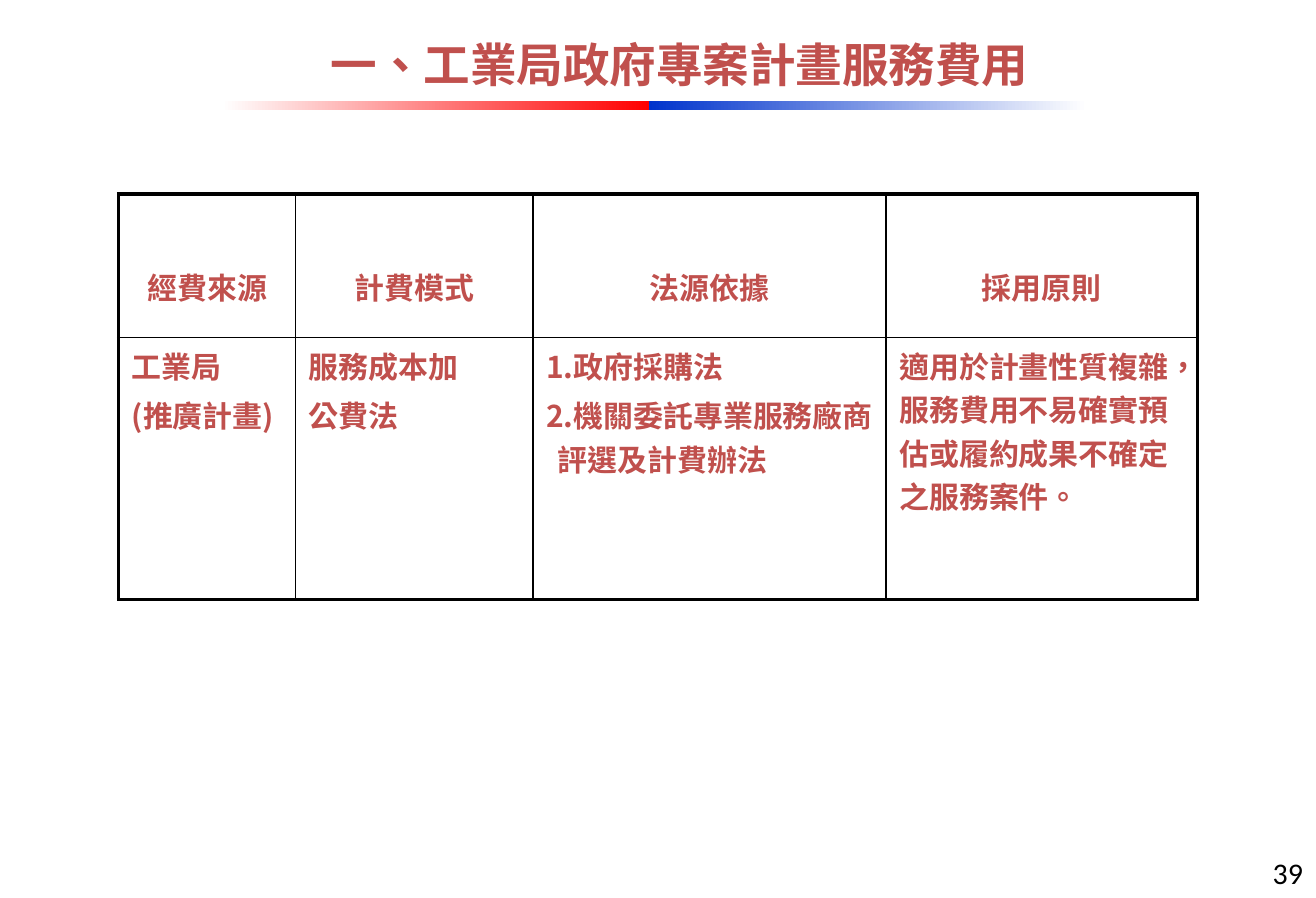
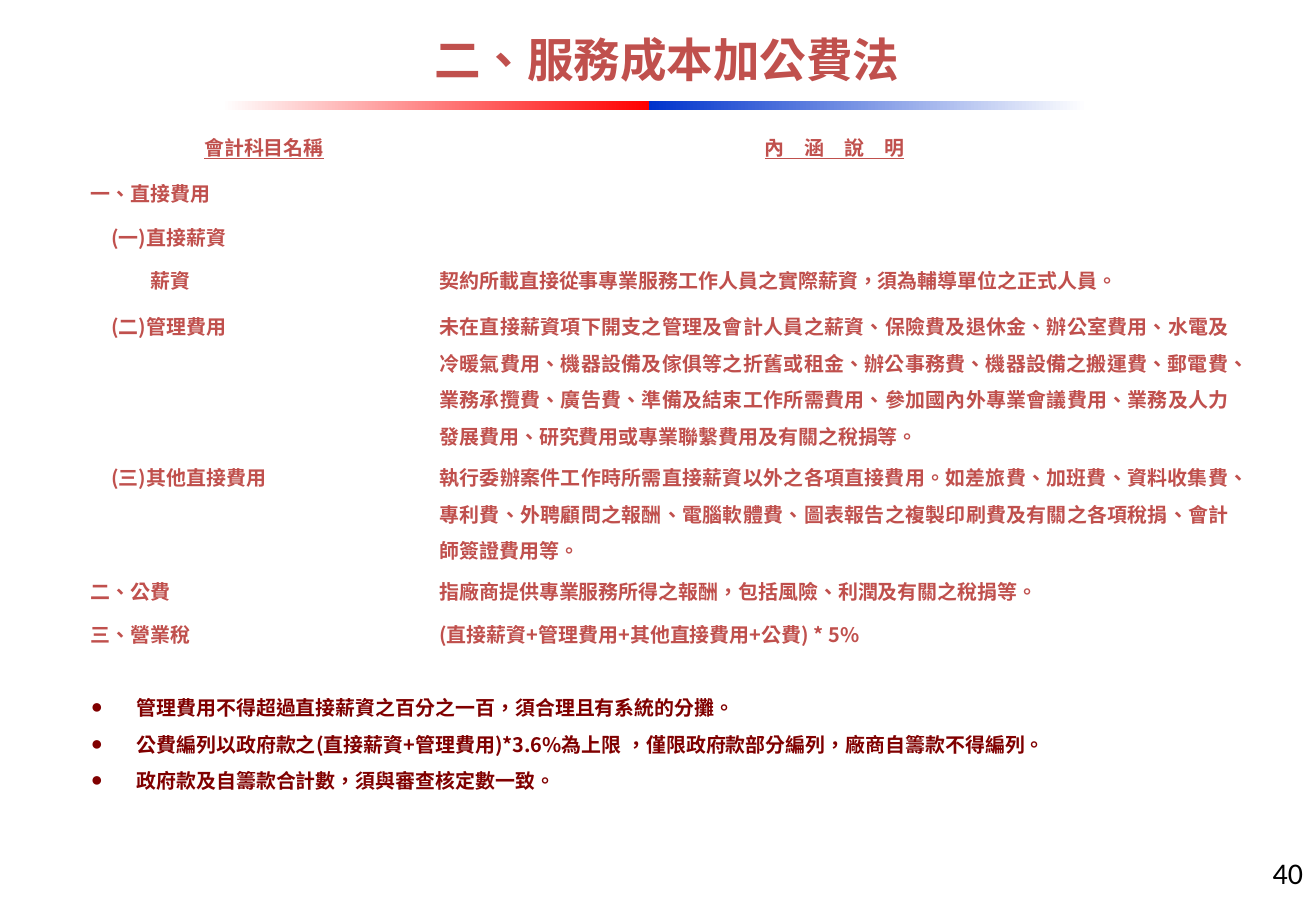
"""Build two slides on service fees for government projects."""
from lxml.etree import SubElement
from pptx import Presentation
from pptx.dml.color import RGBColor
from pptx.enum.shapes import MSO_SHAPE
from pptx.enum.text import MSO_ANCHOR, PP_ALIGN
from pptx.oxml import parse_xml
from pptx.oxml.ns import nsdecls, qn
from pptx.util import Inches, Pt

BRICK = RGBColor(0xC0, 0x50, 0x4D)
MAROON = RGBColor(0x80, 0x00, 0x00)
BLACK = RGBColor(0x00, 0x00, 0x00)
WHITE = RGBColor(0xFF, 0xFF, 0xFF)
RED = RGBColor(0xFF, 0x00, 0x00)
BLUE = RGBColor(0x00, 0x33, 0xCC)
EAST_ASIAN = "Noto Sans CJK TC"
TABLE_FONT = "Noto Sans CJK SC"
NO_STYLE = "{2D5ABB26-0587-4C30-8999-92F81FD0307C}"
OUTER, INNER = Pt(2.25), Pt(1)
LINE = Pt(22)

FEE_HEADINGS = ["經費來源", "計費模式", "法源依據", "採用原則"]
FEE_DETAILS = [
    ["工業局", "(推廣計畫)"],
    ["服務成本加", "公費法"],
    ["1.政府採購法", "2.機關委託專業服務廠商評選及計費辦法"],
    ["適用於計畫性質複雜，服務費用不易確實預估或履約成果不確定之服務案件。"],
]
ACCOUNT_HEADINGS = ["會計科目名稱", "內　涵　說　明"]
MAIN_ITEM, SUB_ITEM, DETAIL_ITEM = (0.33, -0.33), (0.5, -0.33), (0.5, 0)
ACCOUNTS = [
    (MAIN_ITEM, "一、直接費用", ""),
    (SUB_ITEM, "(一)直接薪資", ""),
    (DETAIL_ITEM, "薪資", "契約所載直接從事專業服務工作人員之實際薪資，須為輔導單位之正式人員。"),
    (SUB_ITEM, "(二)管理費用",
     "未在直接薪資項下開支之管理及會計人員之薪資、保險費及退休金、辦公室費用、水電及"
     "冷暖氣費用、機器設備及傢俱等之折舊或租金、辦公事務費、機器設備之搬運費、郵電費、"
     "業務承攬費、廣告費、準備及結束工作所需費用、參加國內外專業會議費用、業務及人力"
     "發展費用、研究費用或專業聯繫費用及有關之稅捐等。"),
    (SUB_ITEM, "(三)其他直接費用",
     "執行委辦案件工作時所需直接薪資以外之各項直接費用。如差旅費、加班費、資料收集費、"
     "專利費、外聘顧問之報酬、電腦軟體費、圖表報告之複製印刷費及有關之各項稅捐、會計"
     "師簽證費用等。"),
    (MAIN_ITEM, "二、公費", "指廠商提供專業服務所得之報酬，包括風險、利潤及有關之稅捐等。"),
    (MAIN_ITEM, "三、營業稅", "(直接薪資+管理費用+其他直接費用+公費) * 5%"),
]
NOTES = [
    "管理費用不得超過直接薪資之百分之一百，須合理且有系統的分攤。",
    "公費編列以政府款之(直接薪資+管理費用)*3.6%為上限 ，僅限政府款部分編列，廠商自籌款不得編列。",
    "政府款及自籌款合計數，須與審查核定數一致。",
]


def add_span(para, text, size, font=TABLE_FONT, color=BRICK, bold=True, underline=False):
    """Add one formatted run to a paragraph."""
    span = para.add_run()
    span.text = text
    span.font.size = Pt(size)
    span.font.name = font
    span.font.bold = bold
    span.font.underline = underline
    span.font.color.rgb = color
    properties = span.font._element if hasattr(span.font, "_element") else span._r.get_or_add_rPr()
    properties.set("lang", "zh-TW")
    east_asian = parse_xml(f'<a:ea {nsdecls("a")} typeface="{EAST_ASIAN}"/>')
    properties.find(qn("a:latin")).addnext(east_asian)


def next_para(frame, align, line_spacing=None, space_before=0, indent=(0, 0), bullet=None):
    """Return a formatted paragraph, using the empty first one if it is free."""
    first = not frame.paragraphs[0].runs
    para = frame.paragraphs[0] if first else frame.add_paragraph()
    para.alignment = align
    if line_spacing:
        para.line_spacing = line_spacing
    para.space_before = Pt(0 if first else space_before)
    properties = para._p.get_or_add_pPr()
    properties.set("marL", str(Inches(indent[0])))
    properties.set("indent", str(Inches(indent[1])))
    if bullet:
        SubElement(properties, qn("a:buFont")).set("typeface", "Arial")
        SubElement(properties, qn("a:buChar")).set("char", bullet)
    return para


def add_text(page, place, text, align, anchor, **style):
    """Add a one-paragraph text box."""
    box = page.shapes.add_textbox(*map(Inches, place))
    frame = box.text_frame
    frame.word_wrap = True
    frame.vertical_anchor = anchor
    add_span(next_para(frame, align), text, **style)


def add_band(page, left, width, start, end):
    """Add one half of the fading band under the title."""
    band = page.shapes.add_shape(
        MSO_SHAPE.RECTANGLE, Inches(left), Inches(0.84), Inches(width), Inches(0.08))
    band.shadow.inherit = False
    band.line.fill.background()
    band.fill.gradient()
    band.fill.gradient_angle = 0
    for stop, position, color in zip(band.fill.gradient_stops, (0, 1), (start, end)):
        stop.position = position
        stop.color.rgb = color


def add_page(deck, title, title_place, number):
    """Add a blank page with the shared band, title and page number."""
    page = deck.slides.add_slide(deck.slide_layouts[6])
    add_band(page, 1.85, 3.57, WHITE, RED)
    add_band(page, 5.42, 3.66, BLUE, WHITE)
    add_text(page, (8.87, 7.09, 2.11, 0.41), number, PP_ALIGN.RIGHT, MSO_ANCHOR.TOP,
             size=18, font="Calibri", color=BLACK, bold=False)
    add_text(page, title_place, title, PP_ALIGN.CENTER, MSO_ANCHOR.MIDDLE, size=28, font="Arial")
    return page


def add_plain_table(page, left, top, widths, heights, margins):
    """Add an unstyled, unfilled table with the given grid and cell margins."""
    table = page.shapes.add_table(
        len(heights), len(widths), Inches(left), Inches(top),
        Inches(sum(widths)), Inches(sum(heights))).table
    table.first_row = table.horz_banding = False
    table._tbl.tblPr.find(qn("a:tableStyleId")).text = NO_STYLE
    for column, width in zip(table.columns, widths):
        column.width = Inches(width)
    for row, height in zip(table.rows, heights):
        row.height = Inches(height)
    for cell in table.iter_cells():
        cell.margin_left = cell.margin_right = Inches(margins[0])
        cell.margin_top = cell.margin_bottom = Inches(margins[1])
        cell.fill.background()
    return table


def add_borders(table):
    """Draw a heavy frame and thin inner lines."""
    last_row, last_column = len(table.rows) - 1, len(table.columns) - 1
    for row in range(last_row + 1):
        for column in range(last_column + 1):
            edges = {"lnL": column == 0, "lnR": column == last_column,
                     "lnT": row == 0, "lnB": row == last_row}
            properties = table.cell(row, column)._tc.get_or_add_tcPr()
            for index, (tag, outer) in enumerate(edges.items()):
                properties.insert(index, parse_xml(
                    f'<a:{tag} {nsdecls("a")} w="{OUTER if outer else INNER}"><a:solidFill>'
                    f'<a:srgbClr val="{BLACK}"/></a:solidFill></a:{tag}>'))


def build_fee_page(deck):
    """Build the page on sources and modes of service fees."""
    page = add_page(deck, "一、工業局政府專案計畫服務費用", (0.91, 0.15, 9.53, 0.77), "39")
    table = add_plain_table(page, 0.99, 1.62, [1.48, 1.98, 2.95, 2.6], [1.2, 2.19], (0.11, 0.05))
    add_borders(table)
    for column, (heading, details) in enumerate(zip(FEE_HEADINGS, FEE_DETAILS)):
        para = next_para(table.cell(0, column).text_frame, PP_ALIGN.CENTER, 2.5)
        add_span(para, heading, 18)
        indent = (0.1, -0.1) if details[0].startswith("1.") else (0, 0)
        for detail in details:
            para = next_para(table.cell(1, column).text_frame, PP_ALIGN.LEFT,
                             space_before=3.6, indent=indent)
            add_span(para, detail, 18)


def build_account_page(deck):
    """Build the page on accounting items and their notes."""
    page = add_page(deck, "二、服務成本加公費法", (0.54, 0, 10.06, 0.99), "40")
    heights = [0.39, 0.36, 0.36, 0.39, 1.26, 0.95, 0.36, 0.61, 1.26]
    table = add_plain_table(page, 0.75, 1.04, [2.91, 6.62], heights, (0.01, 0))
    for column, heading in enumerate(ACCOUNT_HEADINGS):
        para = next_para(table.cell(0, column).text_frame, PP_ALIGN.CENTER, LINE)
        add_span(para, heading, 12, EAST_ASIAN, underline=True)
    for row, (indent, name, meaning) in enumerate(ACCOUNTS, start=1):
        for column, (text, margin) in enumerate([(name, indent), (meaning, (0, 0))]):
            para = next_para(table.cell(row, column).text_frame, PP_ALIGN.JUSTIFY, LINE,
                             indent=margin)
            if text:
                add_span(para, text, 12, EAST_ASIAN)
    last = len(heights) - 1
    table.cell(last, 0).merge(table.cell(last, 1))
    for note in NOTES:
        para = next_para(table.cell(last, 0).text_frame, PP_ALIGN.JUSTIFY, LINE,
                         indent=(0.38, -0.38), bullet="●")
        add_span(para, note, 12, EAST_ASIAN, MAROON)


def main():
    """Create and save the deck."""
    deck = Presentation()
    deck.slide_width, deck.slide_height = Inches(10.99), Inches(7.5)
    build_fee_page(deck)
    build_account_page(deck)
    deck.save("out.pptx")


if __name__ == "__main__":
    main()
